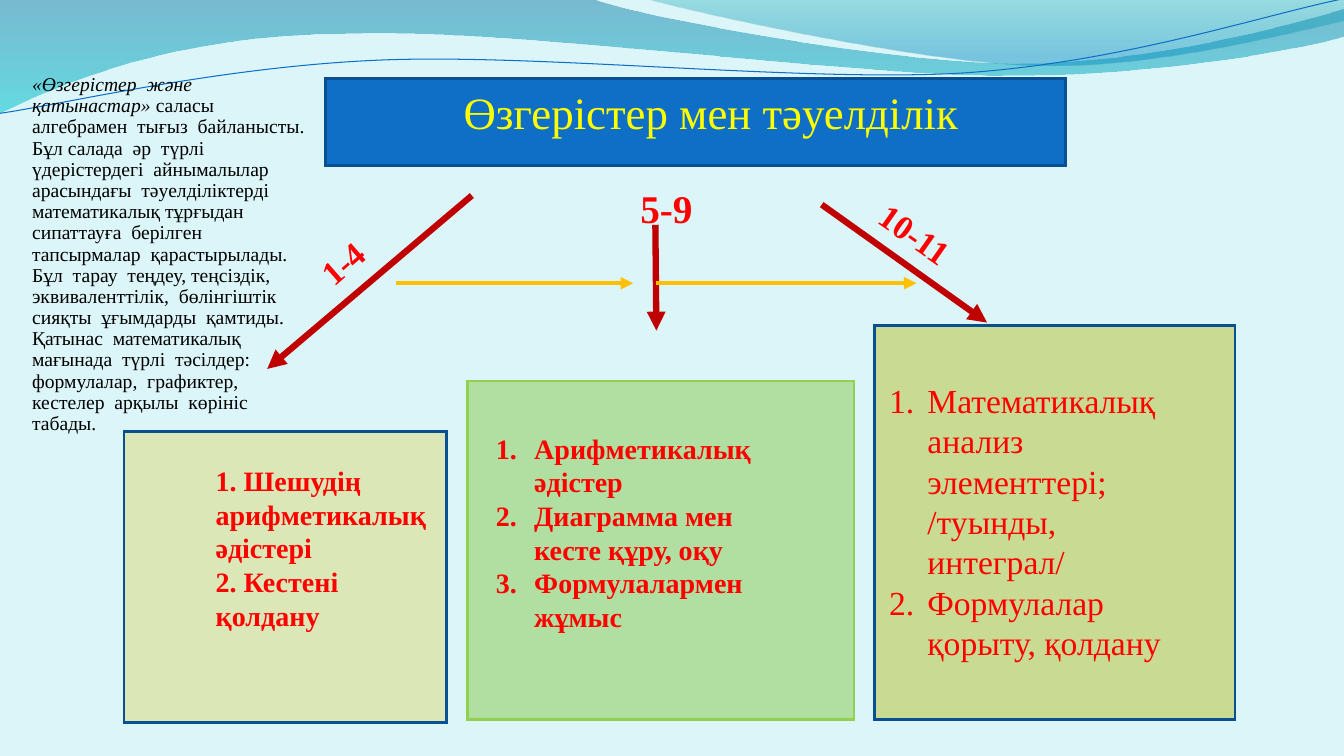
import pptx
import pptx.dml.color
import pptx.enum.shapes
import pptx.enum.text
import pptx.oxml.ns
import pptx.util
from dataclasses import dataclass
from lxml import etree

Inches = pptx.util.Inches
qn = pptx.oxml.ns.qn


def rgb(value):
    return pptx.dml.color.RGBColor.from_string(value)


@dataclass
class Theme:
    font: str = "Times New Roman"
    background: str = "DBF5F9"
    blue: str = "0F6FC6"
    navy: str = "085091"
    lime: str = "92D050"
    pale_lime: str = "DBE7B6"
    pale_green: str = "B0DFA1"
    olive: str = "C9DA92"
    dark_red: str = "C00000"
    amber: str = "FFC000"
    red: str = "FF0000"
    yellow: str = "FFFF00"
    black: str = "000000"
    title: int = 32
    grade: int = 28
    large: int = 24
    body: int = 20
    note: int = 14
    border: float = 2
    thin: float = 0.75


class SlideBuilder:
    def __init__(self, s, theme):
        self.s = s
        self.theme = theme
        s.background.fill.solid()
        s.background.fill.fore_color.rgb = rgb(theme.background)

    def wave(self, start, segments, stops=None, line=None, rotation=0):
        points = [start]
        for segment in segments:
            points += zip(segment[::2], segment[1::2])
        points = [(Inches(x), Inches(y)) for x, y in points]
        builder = self.s.shapes.build_freeform(*points[0], scale=1.0)
        builder.add_line_segments(points[1:], close=stops is not None)
        sp = builder.convert_to_shape()
        self.bend(sp, segments)
        sp.shadow.inherit = False
        sp.rotation = rotation
        if stops:
            self.gradient(sp, stops)
            sp.line.fill.background()
        else:
            sp.fill.background()
            sp.line.color.rgb = rgb(line)
            sp.line.width = pptx.util.Pt(self.theme.thin)

    def bend(self, sp, segments):
        steps = iter(list(sp._element.iter(qn("a:lnTo"))))
        for segment in segments:
            first = next(steps)
            if len(segment) == 6:
                first.tag = qn("a:cubicBezTo")
                for step in (next(steps), next(steps)):
                    first.append(step[0])
                    step.getparent().remove(step)

    def gradient(self, sp, stops):
        sp.fill.gradient()
        grad = sp._element.spPr.find(qn("a:gradFill"))
        for child in list(grad):
            grad.remove(child)
        gs_list = etree.SubElement(grad, qn("a:gsLst"))
        for position, color, alpha in stops:
            gs = etree.SubElement(gs_list, qn("a:gs"), pos=str(position * 1000))
            clr = etree.SubElement(gs, qn("a:srgbClr"), val=color)
            etree.SubElement(clr, qn("a:alpha"), val=str(alpha * 1000))
        etree.SubElement(grad, qn("a:lin"), ang="5400000", scaled="0")

    def box(self, bounds, fill, line):
        sp = self.s.shapes.add_shape(
            pptx.enum.shapes.MSO_SHAPE.RECTANGLE, *map(Inches, bounds))
        sp.shadow.inherit = False
        sp.fill.solid()
        sp.fill.fore_color.rgb = rgb(fill)
        sp.line.color.rgb = rgb(line)
        sp.line.width = pptx.util.Pt(self.theme.border)
        etree.SubElement(sp.line._get_or_add_ln(), qn("a:miter"), lim="800000")

    def arrow(self, start, end, color, width):
        cxn = self.s.shapes.add_connector(
            pptx.enum.shapes.MSO_CONNECTOR.STRAIGHT, *map(Inches, start + end))
        cxn.line.color.rgb = rgb(color)
        cxn.line.width = pptx.util.Pt(width)
        etree.SubElement(cxn.line._get_or_add_ln(), qn("a:tailEnd"), type="triangle")
        etree.SubElement(cxn._element.spPr, qn("a:effectLst"))

    def text(self, bounds, paragraphs, size, color, bold=False, rotation=0,
             centered=False, numbered=False, spacing=None):
        sp = self.s.shapes.add_textbox(*map(Inches, bounds))
        sp.rotation = rotation
        tf = sp.text_frame
        tf.word_wrap = True
        tf.auto_size = pptx.enum.text.MSO_AUTO_SIZE.SHAPE_TO_FIT_TEXT
        for i, runs in enumerate(paragraphs):
            p = tf.add_paragraph() if i else tf.paragraphs[0]
            if numbered:
                self.number(p)
            if centered:
                p.alignment = pptx.enum.text.PP_ALIGN.CENTER
            if spacing:
                p.line_spacing = spacing
            for content, italic in runs:
                r = p.add_run()
                r.text = content
                r.font.name = self.theme.font
                r.font.size = pptx.util.Pt(size)
                r.font.color.rgb = rgb(color)
                r.font.bold = bold
                r.font.italic = italic

    def number(self, p):
        pPr = p._p.get_or_add_pPr()
        pPr.set("marL", str(Inches(0.38)))
        pPr.set("indent", str(-Inches(0.38)))
        etree.SubElement(pPr, qn("a:buFont"), typeface="+mj-lt")
        etree.SubElement(pPr, qn("a:buAutoNum"), type="arabicPeriod")


def plain(*lines):
    return [[(line, False)] for line in lines]


def main():
    prs = pptx.Presentation()
    prs.slide_width, prs.slide_height = Inches(13.33), Inches(7.5)
    theme = Theme()
    slide = SlideBuilder(prs.slides.add_slide(prs.slide_layouts[6]), theme)

    slide.wave((0, -0.01), [
        (5.87, -0.01), (6.34, 0.17, 8.85, 0.63, 10.11, 0.63),
        (11.38, 0.63, 12.78, 0.26, 13.33, 0.09), (13.35, 0.36),
        (13.11, 0.44, 11.6, 0.76, 9.94, 0.75),
        (8.29, 0.75, 5.09, 0.28, 3.43, 0.34),
        (1.72, 0.35, 0.61, 0.83, -0.01, 1.13),
    ], stops=[(0, "0074A1", 45), (100, "00C6CF", 55)])
    slide.wave((6.39, -0.01), [
        (6.79, 0.11, 9.09, 0.62, 10.25, 0.65),
        (11.41, 0.69, 12.82, 0.32, 13.33, 0.21), (13.33, 0),
    ], stops=[(0, "00A1A9", 30), (80, "008BBF", 45)])
    slide.wave((-0.02, 0.81), [
        (0.62, 0.75, 2.18, 0.45, 3.78, 0.46),
        (5.37, 0.47, 7.95, 0.88, 9.54, 0.86),
        (11.14, 0.83, 12.56, 0.42, 13.36, 0.3),
    ], line=theme.blue, rotation=357.3)

    for start, end in [((4.68, 1.94), (2.65, 3.66)),
                       ((6.5, 2.23), (6.51, 3.28)),
                       ((8.15, 2.03), (9.79, 3.2))]:
        slide.arrow(start, end, theme.dark_red, 4.5)

    for bounds, fill, line in [
            ((3.23, 0.78, 7.34, 0.86), theme.blue, theme.navy),
            ((1.23, 4.28, 3.2, 2.89), theme.pale_lime, theme.navy),
            ((4.64, 3.78, 3.83, 3.36), theme.pale_green, theme.lime),
            ((8.67, 3.23, 3.58, 3.91), theme.olive, theme.navy)]:
        slide.box(bounds, fill, line)

    for left, right in [(3.93, 6.28), (6.51, 9.09)]:
        slide.arrow((left, 2.81), (right, 2.81), theme.amber, 3)

    slide.text((4.5, 0.79, 5.13, 0.64), plain("Өзгерістер мен тәуелділік"),
               theme.title, theme.yellow)
    slide.text((3.01, 2.19, 1.15, 0.5), plain("1-4"), theme.large, theme.red,
               bold=True, rotation=318.72)
    slide.text((5.87, 1.78, 1.48, 0.57), plain("5-9"), theme.grade, theme.red,
               bold=True, centered=True)
    slide.text((8.57, 2.16, 1.27, 0.5), plain("10-11"), theme.large, theme.red,
               bold=True, rotation=35)
    slide.text((2.04, 4.55, 2.39, 1.78),
               plain("1. Шешудің арифметикалық әдістері", "2. Кестені қолдану"),
               theme.body, theme.red, bold=True)
    slide.text((4.82, 4.23, 3.25, 2.12),
               plain("Арифметикалық әдістер", "Диаграмма мен кесте құру, оқу",
                     "Формулалармен жұмыс"),
               theme.body, theme.red, bold=True, numbered=True)
    slide.text((8.72, 3.72, 3.03, 3.23),
               plain("Математикалық анализ элементтері; /туынды, интеграл/",
                     "Формулалар қорыту, қолдану"),
               theme.large, theme.red, numbered=True)
    slide.text((0.22, 0.69, 2.96, 3.28), [[
        ("«Өзгерістер  және  қатынастар» ", True),
        ("саласы  алгебрамен  тығыз  байланысты.  Бұл салада  әр  түрлі  "
         "үдерістердегі  айнымалылар  арасындағы  тәуелділіктерді  "
         "математикалық тұрғыдан  сипаттауға  берілген  тапсырмалар  "
         "қарастырылады.  Бұл  тарау  теңдеу, теңсіздік, эквиваленттілік,  "
         "бөлінгіштік  сияқты  ұғымдарды  қамтиды.  Қатынас  математикалық "
         "мағынада  түрлі  тәсілдер:  формулалар,  графиктер,  кестелер  "
         "арқылы  көрініс  табады.", False),
    ]], theme.note, theme.black, spacing=0.9)

    prs.save("out.pptx")


if __name__ == "__main__":
    main()
